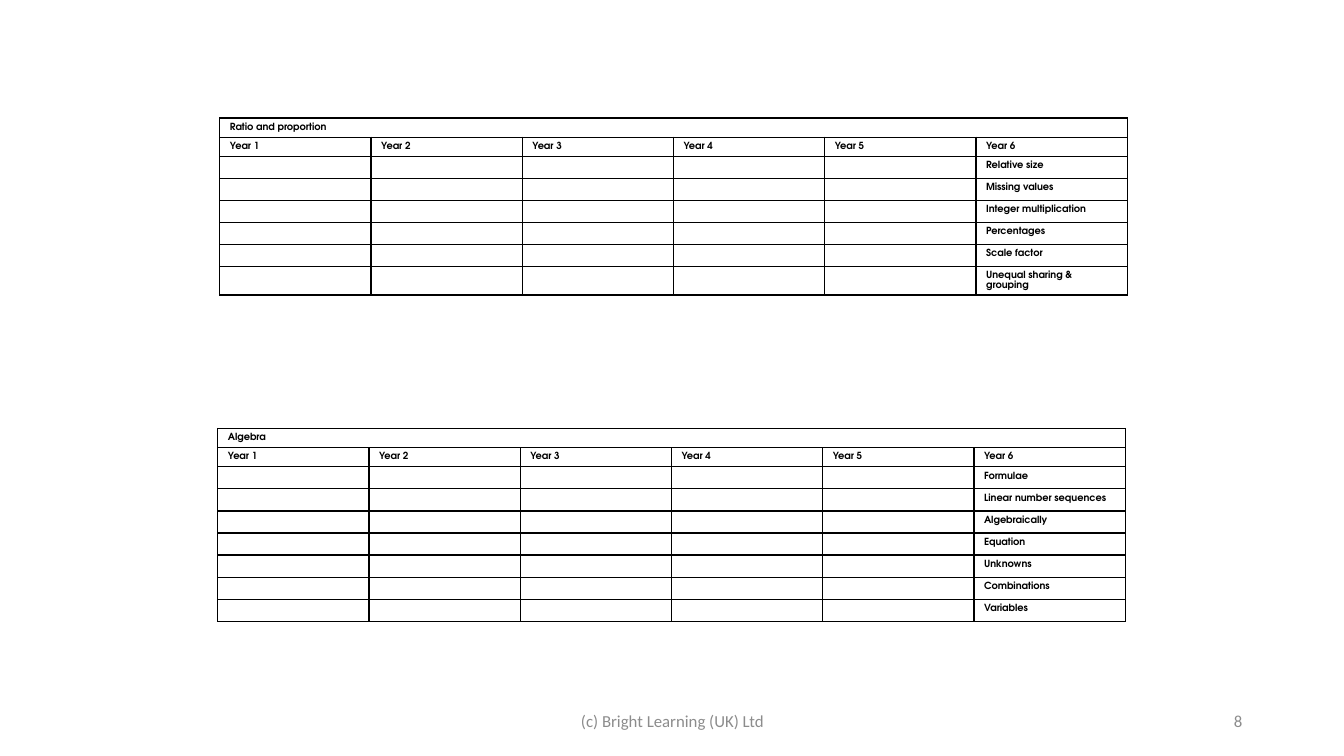
"""Build a slide with the Year 1 to 6 progression tables for ratio and algebra."""
from dataclasses import dataclass

from lxml import etree
from pptx import Presentation
from pptx.dml.color import RGBColor
from pptx.enum.text import MSO_ANCHOR, PP_ALIGN
from pptx.oxml.ns import qn
from pptx.util import Inches, Pt

LEFT, CENTER, RIGHT = PP_ALIGN.LEFT, PP_ALIGN.CENTER, PP_ALIGN.RIGHT
MIDDLE = MSO_ANCHOR.MIDDLE


@dataclass(frozen=True)
class Theme:
    ink: str = "000000"
    muted: str = "8C8C8C"
    table_font: str = "TeX Gyre Adventor"
    footer_font: str = "Calibri"
    table_size: float = 7
    table_leading: float = 6.5
    footer_size: float = 12
    border_width: float = 1


THEME = Theme()


def write(frame, text, font, size, color, bold=False, align=LEFT, leading=None):
    frame.word_wrap = True
    paragraph = frame.paragraphs[0]
    paragraph.alignment = align
    if leading:
        paragraph.line_spacing = Pt(leading)
    paragraph.font.size = Pt(size)
    if text:
        run = paragraph.add_run()
        run.text = text
        run.font.name = font
        run.font.size = Pt(size)
        run.font.bold = bold
        run.font.color.rgb = RGBColor.from_string(color)


def add_borders(cell):
    properties = cell._tc.get_or_add_tcPr()
    for side in ("a:lnL", "a:lnR", "a:lnT", "a:lnB"):
        line = etree.SubElement(properties, qn(side), w=str(Pt(THEME.border_width)))
        fill = etree.SubElement(line, qn("a:solidFill"))
        etree.SubElement(fill, qn("a:srgbClr"), val=THEME.ink)


YEARS = [f"Year {number}" for number in range(1, 7)]
COLUMN_WIDTH, ROW_HEIGHT, TALL_ROW_HEIGHT = 1.5, 0.19, 0.28
STRANDS = [
    ("Ratio and proportion", 2.18, 1.17,
     ["Relative size", "Missing values", "Integer multiplication", "Percentages",
      "Scale factor", "Unequal sharing & grouping"]),
    ("Algebra", 2.16, 4.25,
     ["Formulae", "Linear number sequences", "Algebraically", "Equation",
      "Unknowns", "Combinations", "Variables"]),
]
FOOTERS = [
    ("(c) Bright Learning (UK) Ltd", 4.42, 4.5, CENTER),
    ("8", 9.42, 3, RIGHT),
]

deck = Presentation()
deck.slide_width, deck.slide_height = Inches(13.33), Inches(7.5)
slide = deck.slides.add_slide(deck.slide_layouts[6])

for strand, left, top, year_6_topics in STRANDS:
    blanks = [""] * (len(YEARS) - 1)
    rows = [[strand, *blanks], YEARS] + [[*blanks, topic] for topic in year_6_topics]
    heights = [TALL_ROW_HEIGHT if "Unequal sharing & grouping" in row else ROW_HEIGHT
               for row in rows]
    grid = slide.shapes.add_table(
        len(rows), len(YEARS), Inches(left), Inches(top),
        Inches(COLUMN_WIDTH * len(YEARS)), Inches(sum(heights))).table
    grid.first_row = grid.horz_banding = False
    for column in grid.columns:
        column.width = Inches(COLUMN_WIDTH)
    for row_index, (row, height) in enumerate(zip(rows, heights)):
        grid.rows[row_index].height = Inches(height)
        for column_index, entry in enumerate(row):
            cell = grid.cell(row_index, column_index)
            cell.margin_left = cell.margin_right = Inches(0.1)
            cell.margin_top = cell.margin_bottom = Inches(0.05)
            add_borders(cell)
            cell.fill.background()
            write(cell.text_frame, entry, font=THEME.table_font, size=THEME.table_size,
                  color=THEME.ink, bold=True, leading=THEME.table_leading)
    grid.cell(0, 0).merge(grid.cell(0, len(YEARS) - 1))

for wording, left, width, align in FOOTERS:
    footer = slide.shapes.add_textbox(Inches(left), Inches(6.95), Inches(width), Inches(0.4))
    footer.text_frame.vertical_anchor = MIDDLE
    write(footer.text_frame, wording, font=THEME.footer_font, size=THEME.footer_size,
          color=THEME.muted, align=align)

deck.save("out.pptx")
